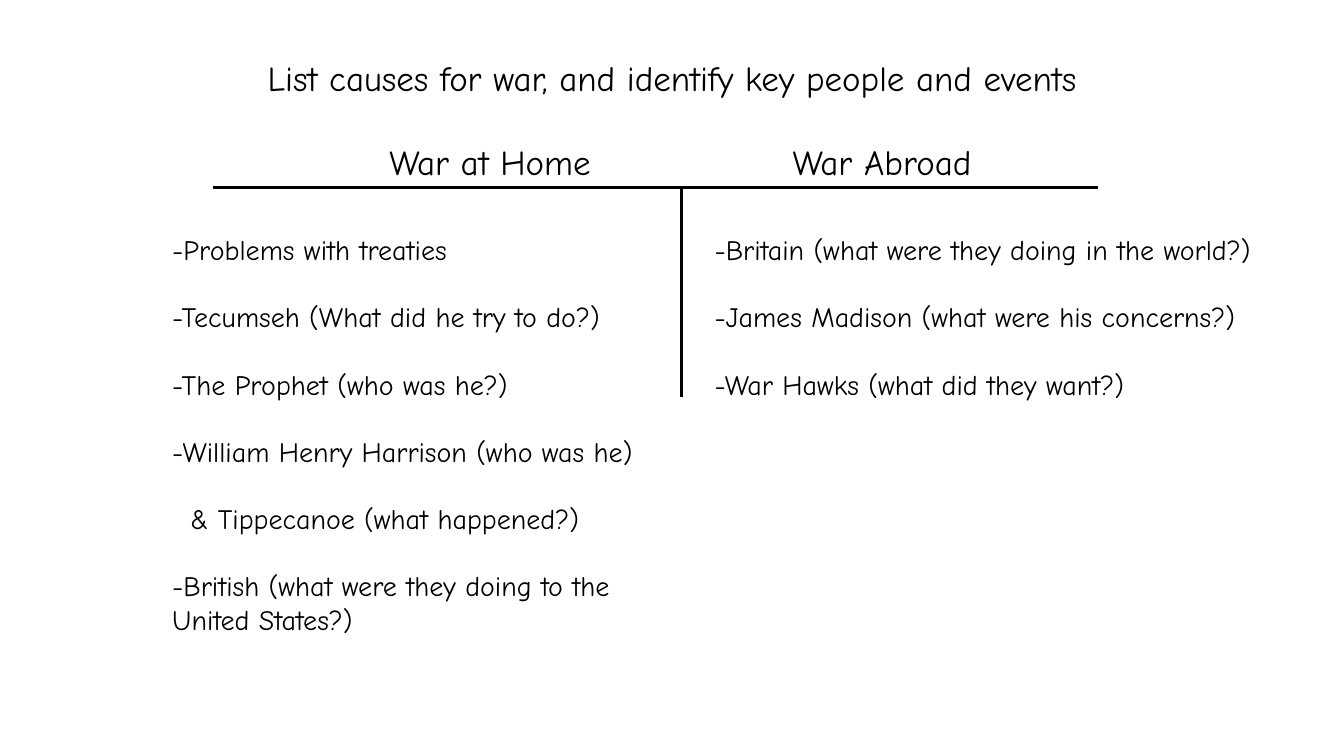
import dataclasses
import typing

import pptx
import pptx.dml.color
import pptx.enum.shapes
import pptx.enum.text
import pptx.oxml.ns
import pptx.slide
import pptx.util
from lxml import etree

ALIGN = pptx.enum.text.PP_ALIGN
COLUMNS = 96
ROWS = 54
CELL = pptx.util.Inches(7.5) / ROWS


@dataclasses.dataclass(frozen=True)
class Theme:
    ink: str = "000000"
    background: str = "FFFFFF"
    font: str = "Comic Neue"
    heading_size: float = 25
    list_size: float = 20
    item_gap: float = 24
    rule_width: float = 2.25


@dataclasses.dataclass(frozen=True)
class Box:
    column: float
    row: float
    columns: float
    rows: float


@dataclasses.dataclass(frozen=True)
class Item:
    text: str
    indent: float = 0


@dataclasses.dataclass(frozen=True)
class Cause:
    heading: str
    heading_box: Box
    list_box: Box
    items: tuple[Item, ...]


@dataclasses.dataclass(frozen=True)
class Rule:
    start_column: float
    start_row: float
    end_column: float
    end_row: float


THEME = Theme()
TITLE = Item("List causes for war, and identify key people and events")
TITLE_BOX = Box(0, 3.67, COLUMNS, 3.74)
HEADING_ROW = 9.65
LIST_ROW = 16.27
BAR_ROW = 13.39
DIVIDER_COLUMN = 48.67

RULES = (
    Rule(15.19, BAR_ROW, 78.41, BAR_ROW),
    Rule(DIVIDER_COLUMN, BAR_ROW, DIVIDER_COLUMN, 28.37),
)

CAUSES = (
    Cause(
        "War at Home",
        Box(25, HEADING_ROW, 20, 3.74),
        Box(11.59, LIST_ROW, 37.87, 29.81),
        (
            Item("-Problems with treaties"),
            Item("-Tecumseh (What did he try to do?)"),
            Item("-The Prophet (who was he?)"),
            Item("-William Henry Harrison (who was he)"),
            Item("& Tippecanoe (what happened?)", indent=1.3),
            Item("-British (what were they doing to the United States?)"),
        ),
    ),
    Cause(
        "War Abroad",
        Box(53, HEADING_ROW, 20, 3.74),
        Box(50.33, LIST_ROW, 45.67, 12.82),
        (
            Item("-Britain (what were they doing in the world?)"),
            Item("-James Madison (what were his concerns?)"),
            Item("-War Hawks (what did they want?)"),
        ),
    ),
)


def grid(cells: float) -> pptx.util.Emu:
    return pptx.util.Emu(round(cells * CELL))


def add_text(
    slide: pptx.slide.Slide,
    items: typing.Sequence[Item],
    *,
    box: Box,
    size: float,
    align: ALIGN = ALIGN.LEFT,
    gap: float = 0,
) -> None:
    shape = slide.shapes.add_textbox(
        grid(box.column), grid(box.row), grid(box.columns), grid(box.rows)
    )
    frame = shape.text_frame
    frame.word_wrap = True
    frame.auto_size = pptx.enum.text.MSO_AUTO_SIZE.SHAPE_TO_FIT_TEXT
    for index, item in enumerate(items):
        paragraph = frame.add_paragraph() if index else frame.paragraphs[0]
        paragraph.alignment = align
        if index:
            paragraph.space_before = pptx.util.Pt(gap)
        if item.indent:
            paragraph._p.get_or_add_pPr().set("marL", str(grid(item.indent)))
        run = paragraph.add_run()
        run.text = item.text
        run.font.name = THEME.font
        run.font.size = pptx.util.Pt(size)
        run.font.color.rgb = pptx.dml.color.RGBColor.from_string(THEME.ink)


def add_rule(slide: pptx.slide.Slide, rule: Rule) -> None:
    connector = slide.shapes.add_connector(
        pptx.enum.shapes.MSO_CONNECTOR.STRAIGHT,
        grid(rule.start_column),
        grid(rule.start_row),
        grid(rule.end_column),
        grid(rule.end_row),
    )
    connector.line.color.rgb = pptx.dml.color.RGBColor.from_string(THEME.ink)
    connector.line.width = pptx.util.Pt(THEME.rule_width)
    etree.SubElement(connector._element.spPr, pptx.oxml.ns.qn("a:effectLst"))


def add_cause(slide: pptx.slide.Slide, cause: Cause) -> None:
    add_text(
        slide,
        [Item(cause.heading)],
        box=cause.heading_box,
        size=THEME.heading_size,
        align=ALIGN.CENTER,
    )
    add_text(
        slide,
        cause.items,
        box=cause.list_box,
        size=THEME.list_size,
        gap=THEME.item_gap,
    )


def main() -> None:
    presentation = pptx.Presentation()
    presentation.slide_width = grid(COLUMNS)
    presentation.slide_height = grid(ROWS)
    slide = presentation.slides.add_slide(presentation.slide_layouts[6])
    fill = slide.background.fill
    fill.solid()
    fill.fore_color.rgb = pptx.dml.color.RGBColor.from_string(THEME.background)

    add_text(
        slide, [TITLE], box=TITLE_BOX, size=THEME.heading_size, align=ALIGN.CENTER
    )
    for rule in RULES:
        add_rule(slide, rule)
    for cause in CAUSES:
        add_cause(slide, cause)
    presentation.save("out.pptx")


if __name__ == "__main__":
    main()
